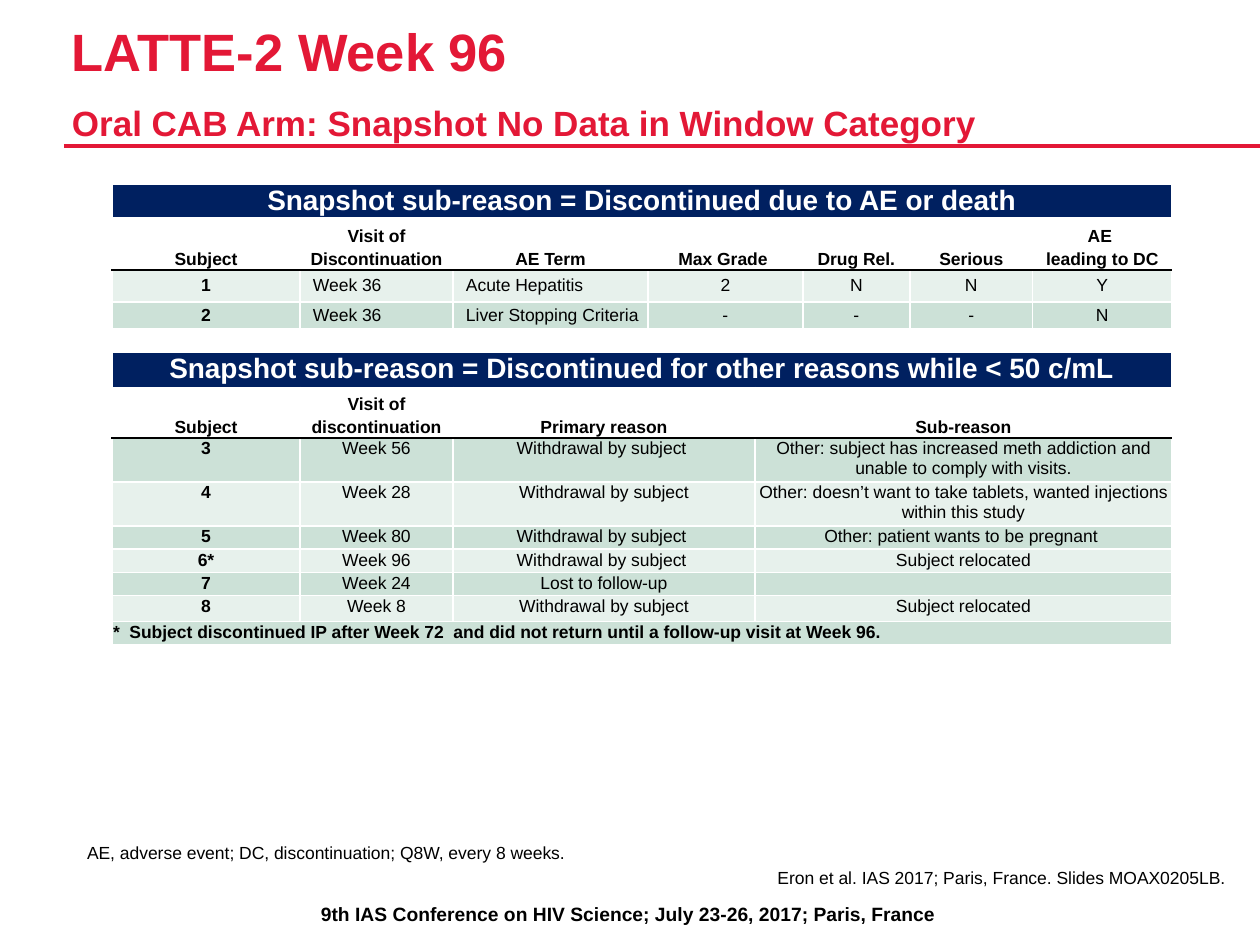
from dataclasses import dataclass
from itertools import groupby

from lxml import etree
from pptx import Presentation
from pptx import util as u
from pptx.dml.color import RGBColor
from pptx.enum import shapes, text
from pptx.oxml.ns import qn

EMU_PER_PX = u.Inches(1) / 126
RED, NAVY, BLACK, WHITE = "E31836", "002060", "000000", "FFFFFF"
PALE, GREEN = "E7F1EC", "CCE1D7"
LEFT, CENTER, RIGHT = text.PP_ALIGN.LEFT, text.PP_ALIGN.CENTER, text.PP_ALIGN.RIGHT
TOP, MIDDLE, BOTTOM = text.MSO_ANCHOR.TOP, text.MSO_ANCHOR.MIDDLE, text.MSO_ANCHOR.BOTTOM

ADVERSE_SPANS = (1, 1, 1, 2, 1, 1, 1)
OTHER_SPANS = (1, 1, 2, 4)
FULL_SPAN = (8,)
COLUMN_WIDTHS = (188, 153, 195, 107, 48, 107, 123, 139)


@dataclass
class TextBox:
    left: int
    top: int
    width: int
    height: int
    content: str
    size: int = 10
    bold: bool = False
    color: str = BLACK
    align: text.PP_ALIGN = LEFT
    anchor: text.MSO_ANCHOR = TOP
    inset: tuple[int, int] = (0, 0)
    space_after: int = 0


@dataclass
class TableRow:
    height: int
    spans: tuple[int, ...]
    texts: tuple[str, ...]
    fill: str
    kind: str = "body"
    anchor: text.MSO_ANCHOR = TOP
    left_columns: tuple[int, ...] = ()


TABLE_ROWS = [
    TableRow(33, FULL_SPAN, ("Snapshot sub-reason = Discontinued due to AE or death",), NAVY, "title"),
    TableRow(50, ADVERSE_SPANS, ("Subject", "Visit of Discontinuation", "AE Term", "Max Grade ",
                                 "Drug Rel.", "Serious", "AE \nleading to DC"), WHITE, "header", BOTTOM),
    TableRow(32, ADVERSE_SPANS, ("1", "Week 36", "Acute Hepatitis", "2", "N", "N", "Y"),
             PALE, anchor=MIDDLE, left_columns=(1, 2)),
    TableRow(27, ADVERSE_SPANS, ("2", "Week 36", "Liver Stopping Criteria", "-", "-", "-", "N"),
             GREEN, anchor=MIDDLE, left_columns=(1, 2)),
    TableRow(23, FULL_SPAN, ("",), WHITE),
    TableRow(33, FULL_SPAN, ("Snapshot sub-reason = Discontinued for other reasons while < 50 c/mL",),
             NAVY, "title"),
    TableRow(48, OTHER_SPANS, ("Subject", "Visit of discontinuation", "Primary reason", "Sub-reason"),
             WHITE, "header", BOTTOM),
    TableRow(41, OTHER_SPANS, ("3", "Week 56", "Withdrawal by subject ",
                               "Other: subject has increased meth addiction and unable to comply with visits."),
             GREEN),
    TableRow(41, OTHER_SPANS, ("4", "Week 28", "Withdrawal by subject",
                               "Other: doesn’t want to take tablets, wanted injections within this study"),
             PALE),
    TableRow(22, OTHER_SPANS, ("5", "Week 80", "Withdrawal by subject ",
                               "Other: patient wants to be pregnant "), GREEN),
    TableRow(22, OTHER_SPANS, ("6*", "Week 96", "Withdrawal by subject ", "Subject relocated"), PALE),
    TableRow(22, OTHER_SPANS, ("7", "Week 24", "Lost to follow-up", ""), GREEN),
    TableRow(26, OTHER_SPANS, ("8", "Week 8", "Withdrawal by subject", "Subject relocated"), PALE),
    TableRow(23, FULL_SPAN, ("*  Subject discontinued IP after Week 72  and did not return until "
                             "a follow-up visit at Week 96.",), GREEN, left_columns=(0,)),
    TableRow(22, FULL_SPAN, ("",), WHITE),
]

TEXT_BOXES = [
    TextBox(8, 896, 1241, 36, "9th IAS Conference on HIV Science; July 23-26, 2017; Paris, France",
            11, True, align=CENTER, inset=(13, 6)),
    TextBox(73, 867, 1152, 25, "Eron et al. IAS 2017; Paris, France. Slides MOAX0205LB.",
            align=RIGHT, space_after=3),
    TextBox(74, 835, 1152, 34, "AE, adverse event; DC, discontinuation; Q8W, every 8 weeks.",
            anchor=BOTTOM, inset=(13, 6)),
]


def px(length: int) -> u.Emu:
    return u.Emu(round(length * EMU_PER_PX))


def rgb(color: str) -> RGBColor:
    return RGBColor.from_string(color)


def format_runs(paragraph, size: int, bold: bool, color: str) -> None:
    for run in paragraph.runs:
        run.font.name = "Arial"
        run.font.size = u.Pt(size)
        run.font.bold = bold
        run.font.color.rgb = rgb(color)


def add_text(slide, box: TextBox):
    shape = slide.shapes.add_textbox(px(box.left), px(box.top), px(box.width), px(box.height))
    frame = shape.text_frame
    frame.word_wrap = True
    frame.vertical_anchor = box.anchor
    frame.margin_left = frame.margin_right = px(box.inset[0])
    frame.margin_top = frame.margin_bottom = px(box.inset[1])
    paragraph = frame.paragraphs[0]
    paragraph.text = box.content
    paragraph.alignment = box.align
    paragraph.space_after = u.Pt(box.space_after)
    format_runs(paragraph, box.size, box.bold, box.color)
    return paragraph


def add_title(slide) -> None:
    paragraph = add_text(slide, TextBox(
        72, 21, 1074, 116, "LATTE-2 Week 96\vOral CAB Arm: Snapshot No Data in Window Category",
        30, True, RED))
    paragraph.line_spacing = u.Pt(35)
    paragraph.runs[1].font.size = u.Pt(20)


def add_rule(slide) -> None:
    connector = slide.shapes.add_connector(shapes.MSO_CONNECTOR.STRAIGHT, px(64), px(146), px(1260), px(146))
    connector.line.color.rgb = rgb(RED)
    connector.line.width = u.Pt(2)
    etree.SubElement(connector._element.spPr, qn("a:effectLst"))


def set_borders(cell, top: str, bottom: str, bottom_width: int) -> None:
    properties = cell._tc.get_or_add_tcPr()
    edges = (("L", WHITE, 1), ("R", WHITE, 1), ("T", top, 1), ("B", bottom, bottom_width))
    for side, color, width in edges:
        line = etree.SubElement(properties, qn(f"a:ln{side}"), w=str(u.Pt(width)))
        fill = etree.SubElement(line, qn("a:solidFill"))
        etree.SubElement(fill, qn("a:srgbClr"), val=color)


def fill_cell(cell, row: TableRow, column: int, content: str) -> None:
    is_left = column in row.left_columns
    cell.margin_left = px(13 if is_left and column else 1)
    cell.margin_right = cell.margin_top = cell.margin_bottom = px(1)
    cell.vertical_anchor = row.anchor
    cell.text_frame.text = content
    for paragraph in cell.text_frame.paragraphs:
        paragraph.alignment = LEFT if is_left else CENTER
        if row.kind == "header":
            paragraph.line_spacing = 1.15
        if not content:
            paragraph._p.get_or_add_endParaRPr().set("sz", "1000")
        format_runs(paragraph, 16 if row.kind == "title" else 10,
                    row.kind != "body" or column == 0, WHITE if row.kind == "title" else BLACK)


def add_snapshot_table(slide) -> None:
    frame = slide.shapes.add_table(len(TABLE_ROWS), len(COLUMN_WIDTHS), px(112), px(184),
                                   px(sum(COLUMN_WIDTHS)), px(sum(row.height for row in TABLE_ROWS)))
    table = frame.table
    table.first_row = table.horz_banding = False
    for column, width in zip(table.columns, COLUMN_WIDTHS):
        column.width = px(width)
    above = ""
    for index, row in enumerate(TABLE_ROWS):
        table.rows[index].height = px(row.height)
        for column in range(len(COLUMN_WIDTHS)):
            cell = table.cell(index, column)
            set_borders(cell, BLACK if above == "header" else WHITE,
                        BLACK if row.kind == "header" else WHITE, 3 if index == 0 else 1)
            cell.fill.solid()
            cell.fill.fore_color.rgb = rgb(row.fill)
        start = 0
        for column, (span, content) in enumerate(zip(row.spans, row.texts)):
            cell = table.cell(index, start)
            if span > 1:
                cell.merge(table.cell(index, start + span - 1))
            fill_cell(cell, row, column, content)
            start += span
        above = row.kind


def main() -> None:
    presentation = Presentation()
    presentation.slide_width, presentation.slide_height = px(1260), px(945)
    slide = presentation.slides.add_slide(presentation.slide_layouts[6])
    add_rule(slide)
    add_title(slide)
    add_snapshot_table(slide)
    for box in TEXT_BOXES:
        add_text(slide, box)
    presentation.save("out.pptx")


if __name__ == "__main__":
    main()
